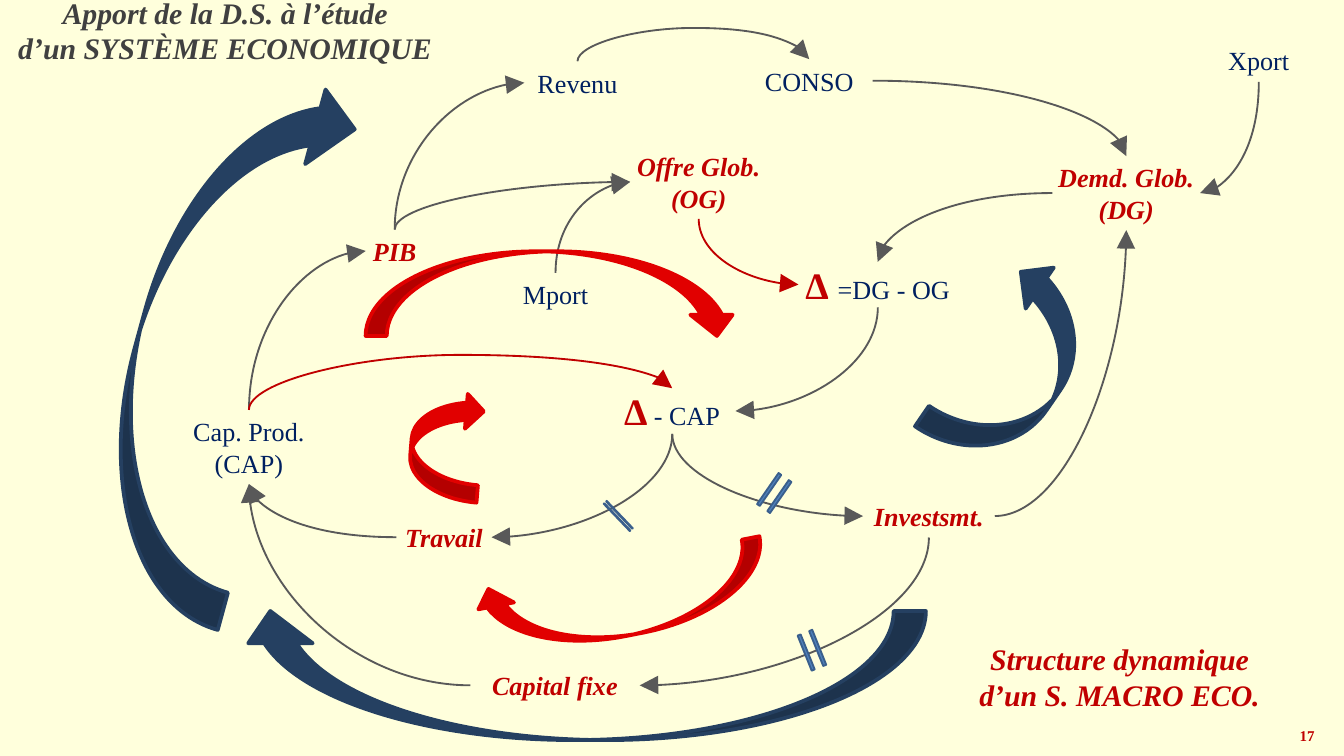
import pptx
import pptx.dml.color
import pptx.enum.shapes
import pptx.enum.text
import pptx.oxml.ns
import pptx.util
from lxml import etree

Cm = pptx.util.Cm
Pt = pptx.util.Pt
qn = pptx.oxml.ns.qn
Shape = pptx.enum.shapes.MSO_SHAPE

RED, NAVY, GRAY = "C00000", "002060", "595959"
ARROW_RED, ARROW_NAVY = "E10000", "254061"
STYLES = {
    "title": (16, "404040", True, True),
    "caption": (16, RED, True, True),
    "key": (14, RED, True, True),
    "plain": (14, NAVY, False, False),
    "delta": (20, RED, True, False),
    "number": (8, RED, True, False),
}


def color(value):
    return pptx.dml.color.RGBColor.from_string(value)


class Diagram:
    font = "Times New Roman"
    line_width = Pt(1)

    def __init__(self, slide):
        self.slide = slide
        self.nodes = {}

    def fill_text(self, shape, box, lines, margins=(0.25, 0.13)):
        shape.left, shape.top, shape.width, shape.height = map(Cm, box)
        frame = shape.text_frame
        frame.word_wrap = True
        frame.auto_size = pptx.enum.text.MSO_AUTO_SIZE.NONE
        frame.vertical_anchor = pptx.enum.text.MSO_ANCHOR.MIDDLE
        frame.margin_left = frame.margin_right = Cm(margins[0])
        frame.margin_top = frame.margin_bottom = Cm(margins[1])
        for index, pieces in enumerate(lines):
            paragraph = frame.paragraphs[0] if index == 0 else frame.add_paragraph()
            paragraph.alignment = pptx.enum.text.PP_ALIGN.CENTER
            for text, style in pieces:
                first = len(paragraph.runs)
                if first:
                    paragraph.add_run().text = text
                else:
                    paragraph.text = text
                for run in paragraph.runs[first:]:
                    size, ink, bold, italic = STYLES[style]
                    run.font.name = self.font
                    run.font.size = Pt(size)
                    run.font.bold, run.font.italic = bold, italic
                    run.font.color.rgb = color(ink)

    def title(self, box, text):
        self.fill_text(self.slide.shapes.title, box, [[(text, "title")]])

    def text(self, box, lines, margins=(0.25, 0.13)):
        shape = self.slide.shapes.add_textbox(0, 0, 0, 0)
        self.fill_text(shape, box, lines, margins)
        return shape

    def node(self, name, box, lines, margin=0.1):
        self.nodes[name] = self.text(box, lines, (margin, margin))

    def anchor(self, name, side):
        shape = self.nodes[name]
        across, down = {"top": (0.5, 0), "bottom": (0.5, 1), "left": (0, 0.5), "right": (1, 0.5)}[side]
        return int(shape.left + across * shape.width), int(shape.top + down * shape.height)

    def link(self, start, start_side, end, end_side, ink=GRAY, apex=None):
        x1, y1 = self.anchor(start, start_side)
        x2, y2 = self.anchor(end, end_side)
        ends = x1, y1, x2, y2
        upright = start_side in ("top", "bottom")
        if upright:
            middle_x, middle_y = (x1 + x2) // 2, (y1 + y2) // 2
            half_x, half_y = (x2 - x1) // 2, (y2 - y1) // 2
            ends = middle_x - half_y, middle_y + half_x, middle_x + half_y, middle_y - half_x
        connector = self.slide.shapes.add_connector(pptx.enum.shapes.MSO_CONNECTOR.CURVE, *ends)
        connector.line.width = self.line_width
        connector.line.color.rgb = color(ink)
        properties = connector.element.spPr
        if upright:
            properties.find(qn("a:xfrm")).set("rot", "5400000")
        geometry = properties.find(qn("a:prstGeom"))
        if apex is None:
            geometry.set("prst", "curvedConnector2")
        else:
            bend = round((Cm(apex) - y1) / (y2 - y1) * 100000)
            etree.SubElement(geometry.find(qn("a:avLst")), qn("a:gd"), name="adj1", fmla=f"val {bend}")
        etree.SubElement(properties.find(qn("a:ln")), qn("a:tailEnd"), type="triangle", w="lg", len="lg")
        etree.SubElement(properties, qn("a:effectLst"))

    def preset(self, kind, box, rotation, fill, line, width):
        shape = self.slide.shapes.add_shape(kind, *map(Cm, box))
        shape.rotation = rotation
        shape.shadow.inherit = False
        shape.fill.solid()
        shape.fill.fore_color.rgb = color(fill)
        shape.line.color.rgb = color(line)
        shape.line.width = width
        return shape

    def loop_arrow(self, box, rotation, ink, flips=()):
        shape = self.preset(Shape.CURVED_LEFT_ARROW, box, rotation, ink, ink, Pt(2))
        for flip in flips:
            shape.element.spPr.find(qn("a:xfrm")).set(flip, "1")

    def delay(self, box, rotation):
        shape = self.preset(Shape.MATH_EQUAL, box, rotation, "4F81BD", "3A5F8C", self.line_width)
        shape.adjustments[0], shape.adjustments[1] = 0.11, 0.31


def main():
    presentation = pptx.Presentation()
    presentation.slide_width, presentation.slide_height = Cm(25.4), Cm(14.29)
    slide = presentation.slides.add_slide(presentation.slide_layouts[5])
    slide.background.fill.solid()
    slide.background.fill.fore_color.rgb = color("FFFFDC")
    diagram = Diagram(slide)

    diagram.title((0, 0, 8.51, 1.14), "Apport de la D.S. à l’étude\vd’un SYSTÈME ECONOMIQUE")
    diagram.text((24.31, 13.54, 0.79, 0.74), [[("17", "number")]], (0, 0.13))

    for name, box, style, *lines in (
        ("supply", (11.91, 2.74, 2.59, 1.4), "key", "Offre Glob.", "(OG)"),
        ("output", (6.91, 4.34, 1.1, 0.81), "key", "PIB"),
        ("capacity", (3.51, 7.75, 2.39, 1.4), "plain", "Cap. Prod.", "(CAP)"),
        ("capital", (8.89, 12.55, 3.2, 0.81), "key", "Capital fixe"),
        ("investment", (16.31, 9.35, 2.49, 0.81), "key", "Investsmt."),
        ("demand", (19.89, 2.95, 2.79, 1.4), "key", "Demd. Glob.", "(DG)"),
        ("labour", (7.49, 9.75, 1.8, 0.81), "key", "Travail"),
        ("income", (9.91, 1.16, 2.01, 0.81), "plain", "Revenu"),
        ("imports", (9.7, 5.16, 1.6, 0.81), "plain", "Mport"),
        ("exports", (23.09, 0.74, 1.4, 0.81), "plain", "Xport"),
        ("consumption", (14.1, 1.12, 2.39, 0.81), "plain", "CONSO"),
    ):
        diagram.node(name, box, [[(line, style)] for line in lines])
    diagram.node("gap", (15.09, 4.95, 3, 0.86), [[("∆ ", "delta"), ("=DG - OG", "plain")]], 0)
    diagram.node("capacity gap", (11.51, 7.34, 2.39, 0.86), [[("∆", "delta"), (" - CAP", "plain")]], 0)

    for link in (
        ("supply", "bottom", "gap", "left", RED),
        ("output", "top", "supply", "left"),
        ("capacity gap", "bottom", "investment", "left"),
        ("gap", "bottom", "capacity gap", "right"),
        ("capital", "left", "capacity", "bottom"),
        ("investment", "bottom", "capital", "right"),
        ("capacity", "top", "output", "left"),
        ("demand", "left", "gap", "top"),
        ("capacity", "top", "capacity gap", "top", RED, 6.71),
        ("capacity gap", "bottom", "labour", "right"),
        ("labour", "left", "capacity", "bottom"),
        ("income", "top", "consumption", "top", GRAY, 0.53),
        ("output", "top", "income", "left"),
        ("investment", "right", "demand", "bottom"),
        ("imports", "top", "supply", "left"),
        ("exports", "bottom", "demand", "right"),
        ("consumption", "right", "demand", "top"),
    ):
        diagram.link(*link)

    diagram.delay((14.86, 12.01, 0.97, 0.56), 248.1)
    diagram.delay((11.2, 9.68, 0.97, 0.15), 46.3)
    diagram.delay((14.15, 9.04, 0.97, 0.56), 304.7)

    both = ("flipH", "flipV")
    diagram.loop_arrow((2.64, 1.17, 2.92, 10.54), 15.3, ARROW_NAVY, both)
    diagram.loop_arrow((9.63, 2.03, 1.6, 7.04), 270, ARROW_RED)
    diagram.loop_arrow((11.07, 8.56, 1.37, 5.56), 79, ARROW_RED)
    diagram.loop_arrow((18.26, 4.93, 1.88, 4.01), 214.4, ARROW_NAVY, ("flipH",))
    diagram.loop_arrow((7.77, 7.39, 1.32, 2.06), 184.6, ARROW_RED)
    diagram.loop_arrow((9.78, 6.27, 2.44, 13), 270, ARROW_NAVY, both)

    diagram.text((17.91, 11.94, 6.5, 1.7), [[("Structure dynamique\vd’un S. MACRO ECO.", "caption")]])
    presentation.save("out.pptx")


if __name__ == "__main__":
    main()
